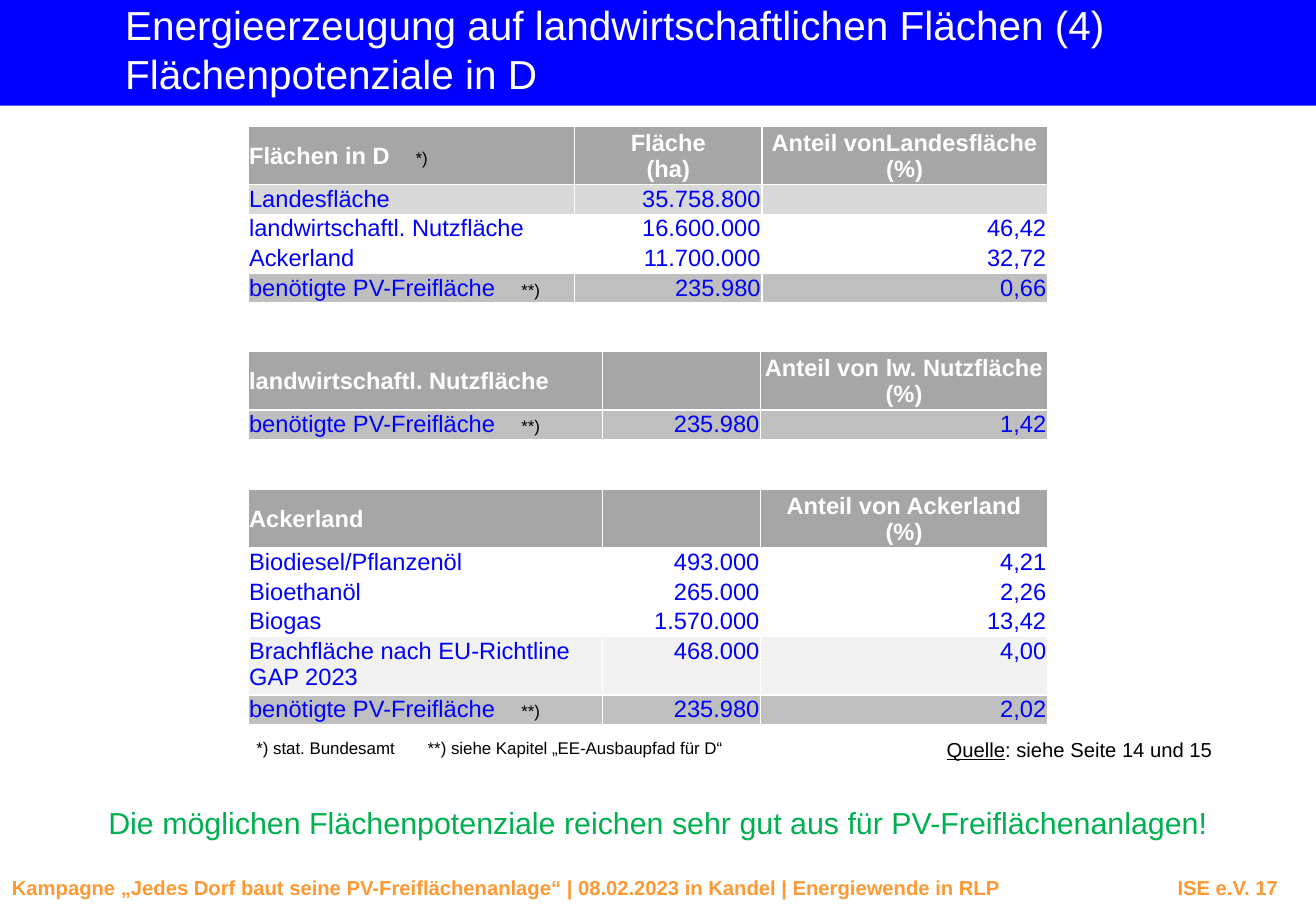
from lxml.etree import SubElement
from pptx import Presentation
from pptx.dml.color import RGBColor
from pptx.enum.shapes import MSO_SHAPE
from pptx.enum.text import MSO_ANCHOR as ANCHOR, PP_ALIGN as ALIGN
from pptx.oxml.ns import qn
from pptx.util import Inches, Pt

THEME = {
    "font": "Arial", "blue": "0000FF", "white": "FFFFFF", "black": "000000",
    "green": "00B050", "orange": "FF9933",
    "head": "A6A6A6", "total": "D9D9D9", "needed": "BFBFBF", "fallow": "F2F2F2",
    "title": 24, "message": 18, "cell": 14, "foot": 12, "note": 10,
}
W, H = 10.83, 7.5
LEFT, TOP, ROW, GAP = 2.04, 1.04, 0.24, 0.415
NOTES_TOP = 6.07


def write(tf, text, size, color, bold=False, align=ALIGN.LEFT, tab=None, tab_align="l"):
    """Fill a text frame with one styled paragraph and an optional tab stop in inches."""
    tf.word_wrap = True
    p = tf.paragraphs[0]
    p.text = text
    p.alignment = align
    if tab:
        tabs = SubElement(p._p.get_or_add_pPr(), qn("a:tabLst"))
        SubElement(tabs, qn("a:tab"), pos=str(Inches(tab)), algn=tab_align)
    for br in p._p.findall(qn("a:br")):
        SubElement(br, qn("a:rPr"), sz=str(THEME[size] * 100))
    if not text:
        p._p.get_or_add_endParaRPr().set("sz", str(THEME[size] * 100))
    for r in p.runs:
        r.font.name = THEME["font"]
        r.font.size = Pt(THEME[size])
        r.font.bold = bold
        r.font.color.rgb = RGBColor.from_string(THEME[color])
    return p


def add_text(box, margin, *args, **kwargs):
    tf = s.shapes.add_textbox(*map(Inches, box)).text_frame
    tf.margin_left = tf.margin_right = Inches(margin[0])
    tf.margin_top = tf.margin_bottom = Inches(margin[1])
    return write(tf, *args, **kwargs)


prs = Presentation()
prs.slide_width, prs.slide_height = Inches(W), Inches(H)
s = prs.slides.add_slide(prs.slide_layouts[6])

# Title band and footer
band = s.shapes.add_shape(MSO_SHAPE.RECTANGLE, 0, 0, Inches(W), Inches(0.87))
band.shadow.inherit = False
band.fill.solid()
band.fill.fore_color.rgb = RGBColor.from_string(THEME["blue"])
band.line.fill.background()
add_text((1.03, 0, 8.15, 0.81), (0, 0),
         "Energieerzeugung auf landwirtschaftlichen Flächen (4)\vFlächenpotenziale in D",
         "title", "white")
add_text((0, 7.16, W, 0.3), (0.1, 0.05),
         "Kampagne „Jedes Dorf baut seine PV-Freiflächenanlage“ | 08.02.2023 in Kandel"
         " | Energiewende in RLP\tISE e.V. 17",
         "foot", "orange", bold=True, tab=10.42, tab_align="r")

# Tables: column widths, then rows of (fill, label, area, share, note, note position)
NEEDED = ("needed", "benötigte PV-Freifläche", "235.980")
NOTE = ("**)", 2.24)
WIDE = (2.92, 1.3, 2.36)
tables = [
    ((2.69, 1.54, 2.35), [
        ("head", "Flächen in D", "Fläche\v(ha)", "Anteil vonLandesfläche\v(%)", "*)", 1.37),
        ("total", "Landesfläche", "35.758.800", ""),
        ("white", "landwirtschaftl. Nutzfläche", "16.600.000", "46,42"),
        ("white", "Ackerland", "11.700.000", "32,72"),
        (*NEEDED, "0,66", *NOTE)]),
    (WIDE, [
        ("head", "landwirtschaftl. Nutzfläche", "", "Anteil von lw. Nutzfläche\v(%)"),
        (*NEEDED, "1,42", *NOTE)]),
    (WIDE, [
        ("head", "Ackerland", "", "Anteil von Ackerland\v(%)"),
        ("white", "Biodiesel/Pflanzenöl", "493.000", "4,21"),
        ("white", "Bioethanöl", "265.000", "2,26"),
        ("white", "Biogas", "1.570.000", "13,42"),
        ("fallow", "Brachfläche nach EU-Richtline\vGAP 2023", "468.000", "4,00"),
        (*NEEDED, "2,02", *NOTE)]),
]
top = TOP
for widths, rows in tables:
    heights = [ROW * (2 if any("\v" in t for t in row[1:4]) else 1) for row in rows]
    table = s.shapes.add_table(len(rows), 3, Inches(LEFT), Inches(top),
                               Inches(sum(widths)), Inches(sum(heights))).table
    for column, width in zip(table.columns, widths):
        column.width = Inches(width)
    for i, (fill, *texts) in enumerate(rows):
        table.rows[i].height = Inches(heights[i])
        is_head = fill == "head"
        for j, text in enumerate(texts[:3]):
            cell = table.cell(i, j)
            cell.margin_left = cell.margin_right = cell.margin_top = Inches(0.01)
            cell.margin_bottom = 0
            cell.vertical_anchor = ANCHOR.MIDDLE if is_head else ANCHOR.TOP
            tcPr = cell._tc.get_or_add_tcPr()
            for side in ("lnL", "lnR", "lnT", "lnB"):
                line = SubElement(tcPr, qn(f"a:{side}"), w=str(Pt(1)))
                color = SubElement(line, qn("a:solidFill"))
                SubElement(color, qn("a:srgbClr"), val=THEME["white"])
            cell.fill.solid()
            cell.fill.fore_color.rgb = RGBColor.from_string(THEME[fill])
            has_note = j == 0 and len(texts) > 3
            align = ALIGN.LEFT if j == 0 else ALIGN.CENTER if is_head else ALIGN.RIGHT
            p = write(cell.text_frame, text, "cell", "white" if is_head else "blue",
                      is_head, align, texts[4] if has_note else None)
            if has_note:
                r = p.add_run()
                r.text = "\t" + texts[3]
                r.font.name, r.font.size, r.font.bold = THEME["font"], Pt(THEME["note"]), False
                r.font.color.rgb = RGBColor.from_string(THEME["black"])
    top += sum(heights) + GAP

# Notes, source and message
for left, width, text in ((2.11, 1.26, "*) stat. Bundesamt"),
                          (3.52, 2.44, "**) siehe Kapitel „EE-Ausbaupfad für D“")):
    add_text((left, NOTES_TOP, width, 0.17), (0, 0), text, "note", "black")
p = add_text((7.79, NOTES_TOP, 2.25, 0.2), (0, 0), "Quelle", "foot", "black")
p.runs[0].font.underline = True
r = p.add_run()
r.text = ": siehe Seite 14 und 15"
r.font.name, r.font.size = THEME["font"], Pt(THEME["foot"])
r.font.color.rgb = RGBColor.from_string(THEME["black"])
add_text((0, 6.55, W, 0.44), (0.07, 0.07),
         "Die möglichen Flächenpotenziale reichen sehr gut aus für PV-Freiflächenanlagen!",
         "message", "green", align=ALIGN.CENTER)

prs.save("out.pptx")
